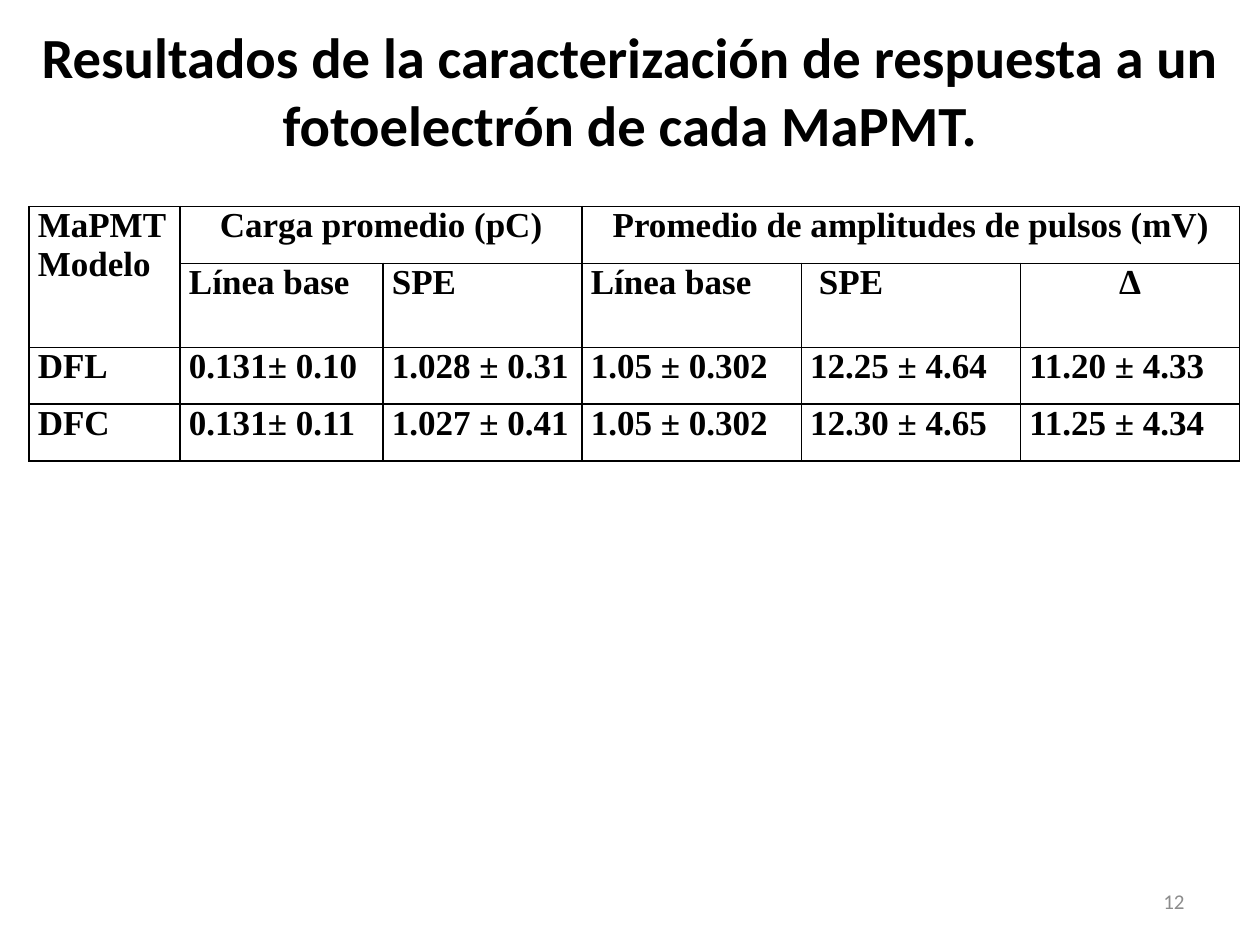
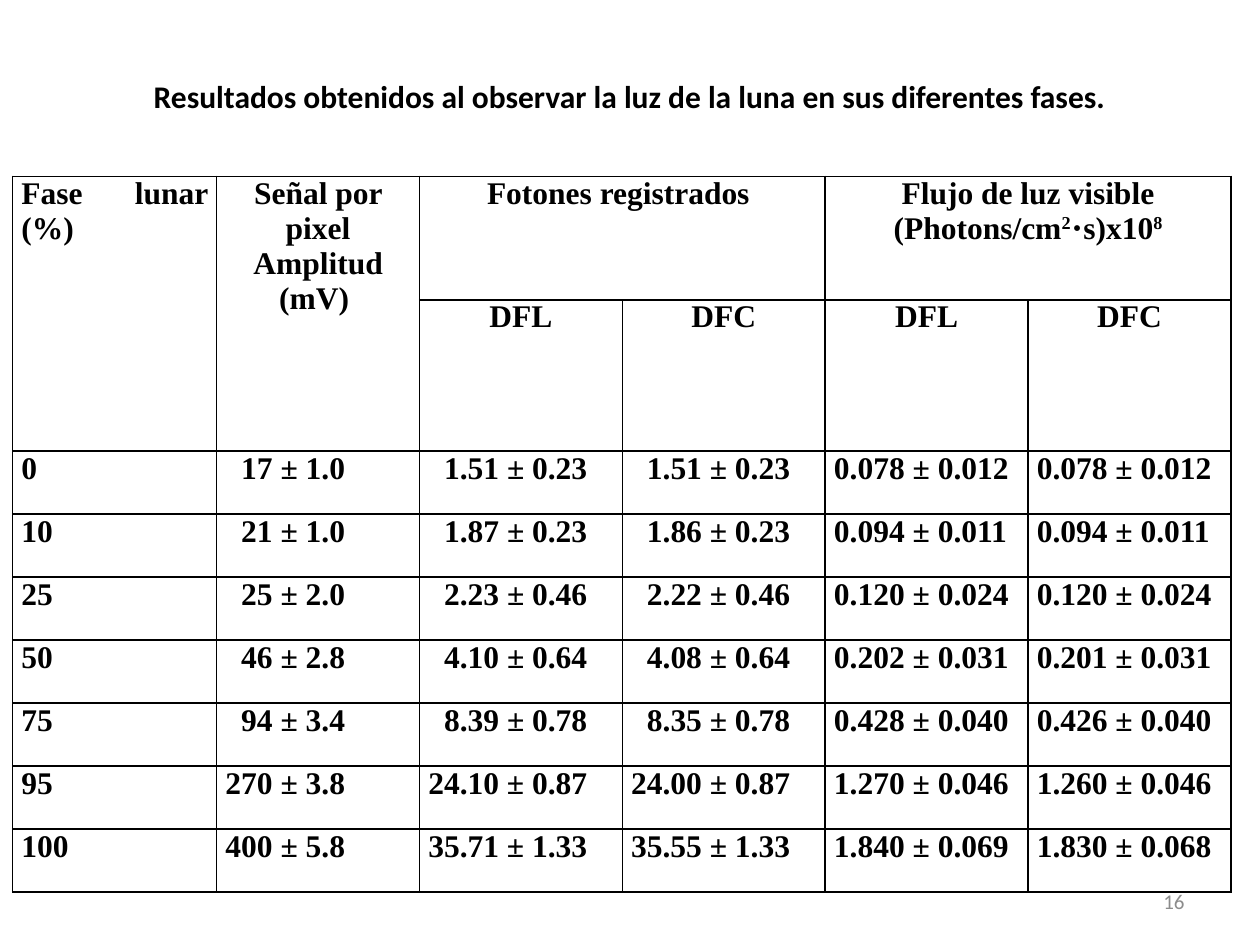
from lxml import etree
from pptx import Presentation
from pptx.dml.color import RGBColor
from pptx.enum import text as t
from pptx.oxml import ns
from pptx.util import Inches, Pt

BLACK = RGBColor(0, 0, 0)
GRAY = RGBColor(0x8C, 0x8C, 0x8C)
SANS, SERIF = "Calibri", "Times New Roman"
MID, JUST, RIGHT = t.PP_ALIGN.CENTER, t.PP_ALIGN.JUSTIFY, t.PP_ALIGN.RIGHT
INSET = 0.07

CHARGE = [
    ["MaPMT\nModelo", "Carga promedio (pC)", "",
     "Promedio de amplitudes de pulsos (mV)", "", ""],
    ["", "Línea base", "SPE", "Línea base", "SPE", "Δ"],
    ["DFL", "0.131± 0.10", "1.028 ± 0.31", "1.05 ± 0.302",
     "12.25 ± 4.64", "11.20 ± 4.33"],
    ["DFC", "0.131± 0.11", "1.027 ± 0.41", "1.05 ± 0.302",
     "12.30 ± 4.65", "11.25 ± 4.34"],
]
MOON = [
    ["Fase lunar (%)", "Señal por pixel\nAmplitud (mV) ",
     "Fotones registrados ", "",
     "Flujo de luz visible\n(Photons/cm^2^⋅s)x10^8", ""],
    ["", "", "DFL", "DFC", "DFL", "DFC"],
    ["0", "17 ± 1.0", "1.51 ± 0.23", "1.51 ± 0.23",
     "0.078 ± 0.012", "0.078 ± 0.012"],
    ["10", "21 ± 1.0", "1.87 ± 0.23", "1.86 ± 0.23",
     "0.094 ± 0.011", "0.094 ± 0.011"],
    ["25", "25 ± 2.0", "2.23 ± 0.46", "2.22 ± 0.46",
     "0.120 ± 0.024", "0.120 ± 0.024"],
    ["50", "46 ± 2.8", "4.10 ± 0.64", "4.08 ± 0.64",
     "0.202 ± 0.031", "0.201 ± 0.031"],
    ["75", "94 ± 3.4", "8.39 ± 0.78", "8.35 ± 0.78",
     "0.428 ± 0.040", "0.426 ± 0.040"],
    ["95", "270 ± 3.8", "24.10 ± 0.87", "24.00 ± 0.87",
     "1.270 ± 0.046", "1.260 ± 0.046"],
    ["100", "400 ± 5.8", "35.71 ± 1.33", "35.55 ± 1.33",
     "1.840 ± 0.069", "1.830 ± 0.068"],
]


def write(frame, words, font, size, color, bold, align):
    """Fill a frame line by line; text between carets is raised."""
    for i, line in enumerate(words.split("\n")):
        para = frame.add_paragraph() if i else frame.paragraphs[0]
        para.alignment = align
        for j, part in enumerate(line.split("^")):
            if not part:
                continue
            run = para.add_run()
            run.text = part
            run.font.name, run.font.size = font, Pt(size)
            run.font.bold = bold
            run.font.color.rgb = color
            if j % 2:
                run._r.get_or_add_rPr().set("baseline", "30000")


def label(slide, box, words, size, color, bold, align):
    """Add a wrapped, vertically centred text box."""
    frame = slide.shapes.add_textbox(*map(Inches, box)).text_frame
    frame.word_wrap = True
    frame.vertical_anchor = t.MSO_ANCHOR.MIDDLE
    write(frame, words, SANS, size, color, bold, align)
    return frame


def border(cell):
    """Rule all four sides of a cell in black."""
    props = cell._tc.get_or_add_tcPr()
    for side in ("lnL", "lnR", "lnT", "lnB"):
        line = etree.SubElement(props, ns.qn("a:" + side), w=str(Pt(1)))
        fill = etree.SubElement(line, ns.qn("a:solidFill"))
        etree.SubElement(fill, ns.qn("a:srgbClr"), val=str(BLACK))


def grid(slide, spot, widths, heights, data, size, spans, mids):
    """Add a ruled table with merged heads and centred cells."""
    area = (*spot, sum(widths), sum(heights))
    table = slide.shapes.add_table(
        len(data), len(widths), *map(Inches, area)).table
    table.first_row = table.horz_banding = False
    for col, width in zip(table.columns, widths):
        col.width = Inches(width)
    for row, height in zip(table.rows, heights):
        row.height = Inches(height)
    for r, row in enumerate(data):
        for c, words in enumerate(row):
            cell = table.cell(r, c)
            border(cell)
            cell.fill.background()
            cell.margin_left = cell.margin_right = Inches(INSET)
            cell.margin_top = cell.margin_bottom = 0
            align = MID if (r, c) in mids else JUST
            if words:
                write(cell.text_frame, words, SERIF, size, BLACK, True, align)
    for r, c, down, over in spans:
        table.cell(r, c).merge(table.cell(r + down - 1, c + over - 1))
    return table


def start(deck, box, title, size, number):
    """Add a slide with its title and page number."""
    slide = deck.slides.add_slide(deck.slide_layouts[6])
    head = label(slide, box, title, size, BLACK, True, MID)
    label(slide, (7.17, 6.95, 2.33, 0.4), number, 12, GRAY, False, RIGHT)
    return slide, head


def charge(deck):
    """Build the single photoelectron slide."""
    slide, head = start(
        deck, (0, 0.39, 10, 1.17),
        "Resultados de la caracterización de respuesta a un "
        "fotoelectrón de cada MaPMT.", 32.4, "12")
    head.margin_bottom = Inches(0.58)
    table = grid(slide, (0.23, 1.64), [1.2, 1.61, 1.58] + [1.74] * 3,
                 [0.45, 0.41, 0.45, 0.45], CHARGE, 20,
                 [(0, 0, 2, 1), (0, 1, 1, 2), (0, 3, 1, 3)],
                 {(0, 1), (0, 3), (1, 5)})
    table.cell(1, 4).margin_left = Inches(2 * INSET)


def moon(deck):
    """Build the lunar phase slide, lining up digits by column."""
    slide, _ = start(
        deck, (0, 0.31, 10, 0.9),
        "Resultados obtenidos al observar la luz de la luna en sus "
        "diferentes fases.", 18, "16")
    size = 18
    mids = {(r, c) for r in range(2) for c in range(1, 6)}
    table = grid(slide, (0.1, 1.4), [1.62] + [1.61] * 5,
                 [0.98] + [0.5] * 8, MOON, size,
                 [(0, 0, 2, 1), (0, 1, 2, 1), (0, 2, 1, 2), (0, 4, 1, 2)],
                 mids)
    for c in range(1, 6):
        most = max(len(row[c]) for row in MOON[2:])
        for r, row in enumerate(MOON[2:], 2):
            pad = (most - len(row[c])) * size / 144
            table.cell(r, c).margin_left = Inches(INSET + pad)


def main():
    """Build and save the deck."""
    deck = Presentation()
    deck.slide_width, deck.slide_height = Inches(10), Inches(7.5)
    charge(deck)
    moon(deck)
    deck.save("out.pptx")


if __name__ == "__main__":
    main()
